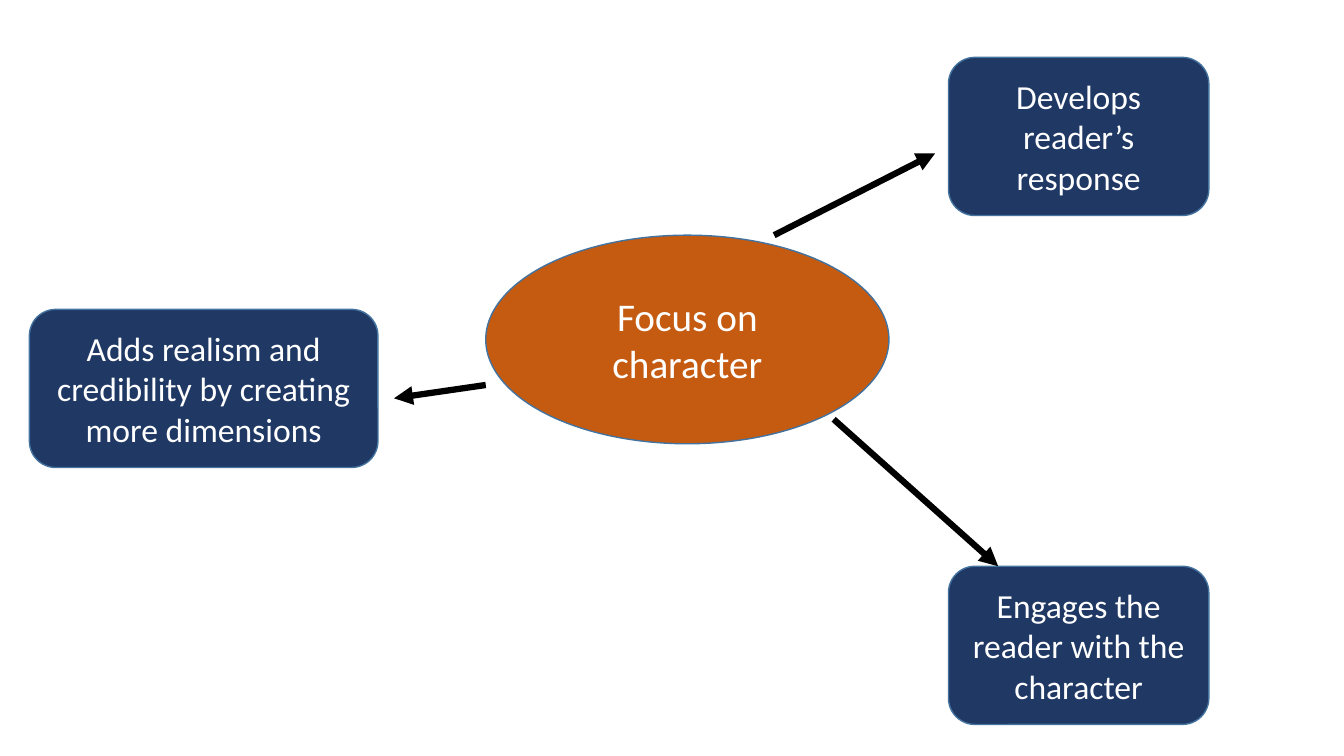
from lxml import etree
from pptx import Presentation
from pptx.dml.color import RGBColor
from pptx.enum.shapes import MSO_CONNECTOR, MSO_SHAPE
from pptx.enum.text import MSO_ANCHOR, PP_ALIGN
from pptx.oxml.ns import qn
from pptx.util import Pt

OVAL = MSO_SHAPE.OVAL
ROUND = MSO_SHAPE.ROUNDED_RECTANGLE
STRAIGHT = MSO_CONNECTOR.STRAIGHT
MIDDLE = MSO_ANCHOR.MIDDLE
CENTER = PP_ALIGN.CENTER

ORANGE = RGBColor(0xC5, 0x5A, 0x11)
NAVY = RGBColor(0x20, 0x38, 0x64)
EDGE = RGBColor(0x43, 0x73, 0x9E)
WHITE = RGBColor(0xFF, 0xFF, 0xFF)
BLACK = RGBColor(0x00, 0x00, 0x00)

BOX_HIGH = 113
RIGHT_COL = 677.5
RIGHT_WIDE = 186

# Text, left, top, width
BOXES = [
    ("Develops reader’s response", RIGHT_COL, 41, RIGHT_WIDE),
    ("Engages the reader with the character", RIGHT_COL, 404.5, RIGHT_WIDE),
    ("Adds realism and credibility by creating more dimensions",
     21, 221, 249),
]

# Start x, start y, end x, end y
ARROWS = [
    (553, 168, 668, 109.5),
    (595.5, 299.5, 713, 404.5),
    (347, 275, 281.5, 284.5),
]


def add_node(slide, kind, text, left, top, width, height, fill, size):
    node = slide.shapes.add_shape(
        kind, Pt(left), Pt(top), Pt(width), Pt(height))
    node.shadow.inherit = False
    node.fill.solid()
    node.fill.fore_color.rgb = fill
    node.line.color.rgb = EDGE
    node.line.width = Pt(1)

    frame = node.text_frame
    frame.word_wrap = True
    frame.vertical_anchor = MIDDLE
    para = frame.paragraphs[0]
    para.text = text
    para.alignment = CENTER
    para.font.name = "Calibri"
    para.font.size = Pt(size)
    para.font.color.rgb = WHITE


def add_arrow(slide, *ends):
    arrow = slide.shapes.add_connector(STRAIGHT, *(Pt(end) for end in ends))
    arrow.line.color.rgb = BLACK
    arrow.line.width = Pt(4.5)
    # Arrowhead, and no shadow
    etree.SubElement(arrow.line._get_or_add_ln(), qn("a:tailEnd"),
                     type="triangle")
    etree.SubElement(arrow._element.spPr, qn("a:effectLst"))


def main():
    deck = Presentation()
    deck.slide_width, deck.slide_height = Pt(960), Pt(540)
    slide = deck.slides.add_slide(deck.slide_layouts[6])

    # Central idea
    add_node(slide, OVAL, "Focus on character", 347, 168, 288, 149,
             ORANGE, 28)

    # Effects around it
    for text, left, top, width in BOXES:
        add_node(slide, ROUND, text, left, top, width, BOX_HIGH, NAVY, 24)

    # Arrows from the idea to its effects
    for ends in ARROWS:
        add_arrow(slide, *ends)

    deck.save("out.pptx")


if __name__ == "__main__":
    main()
